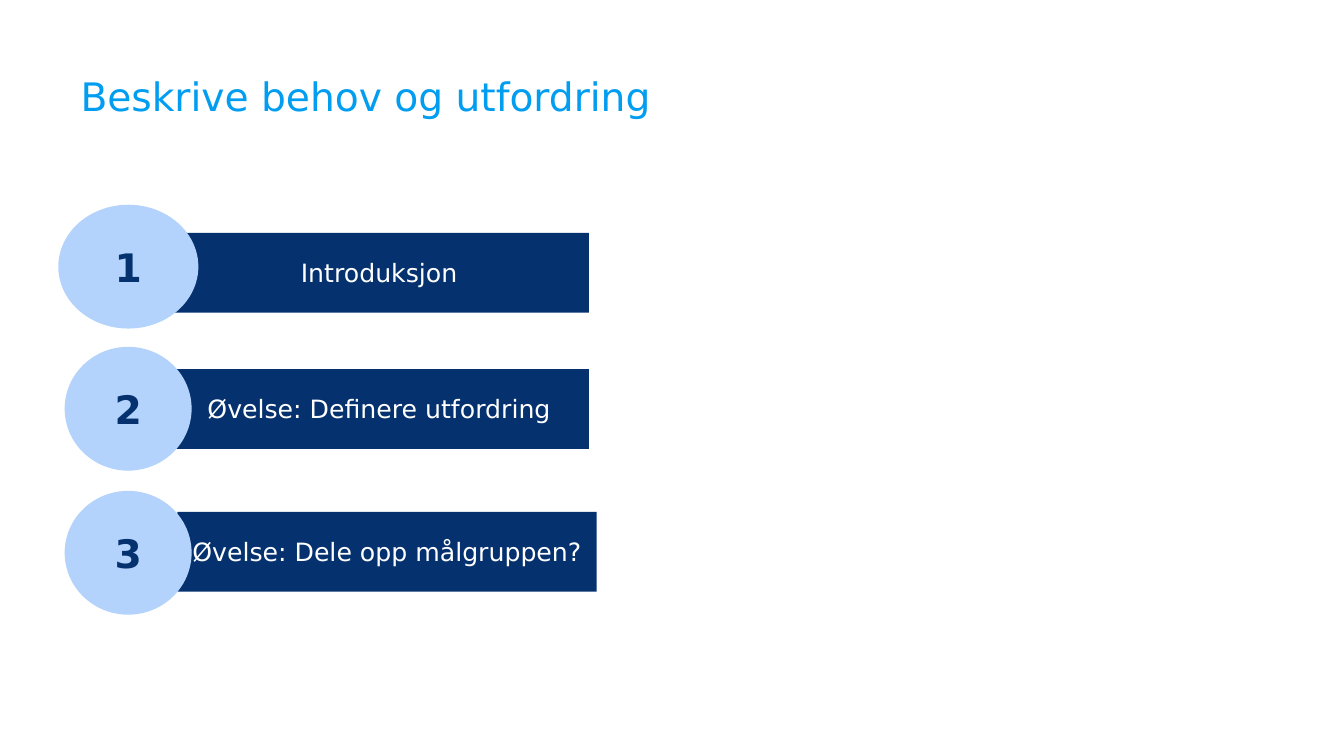
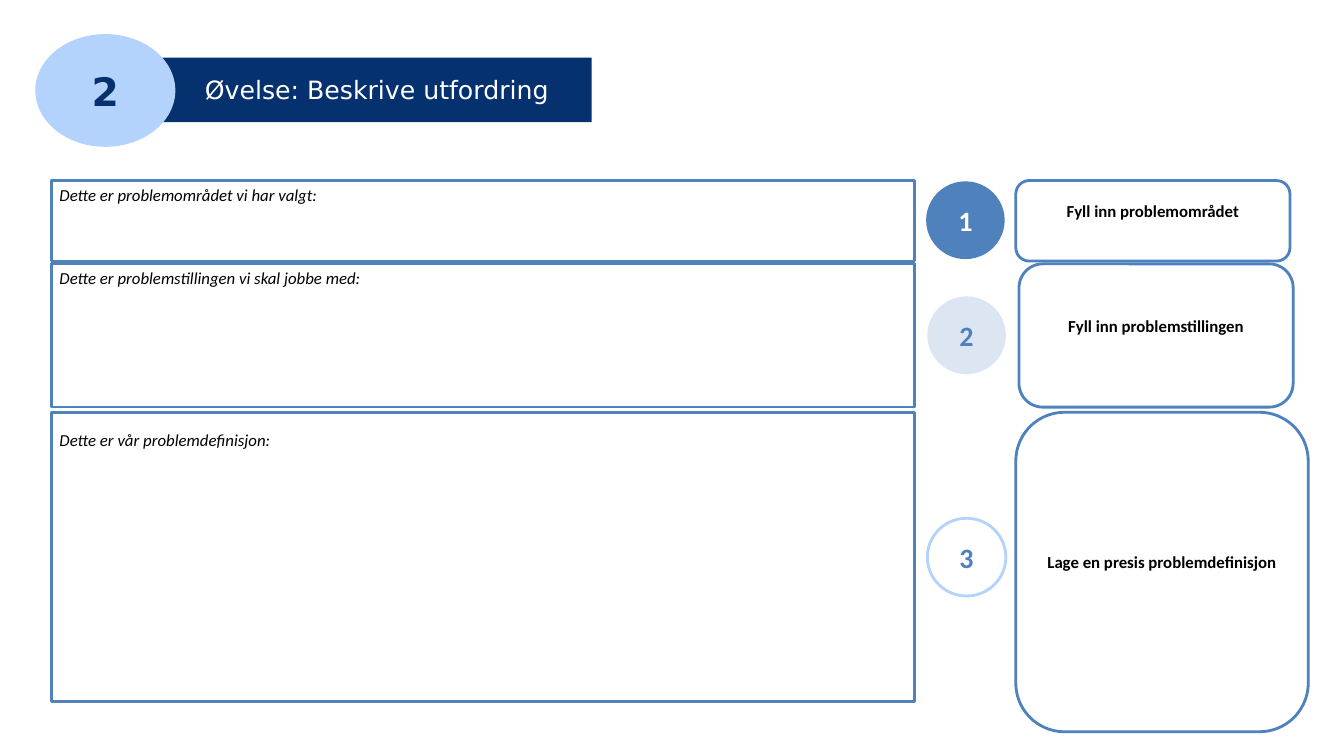
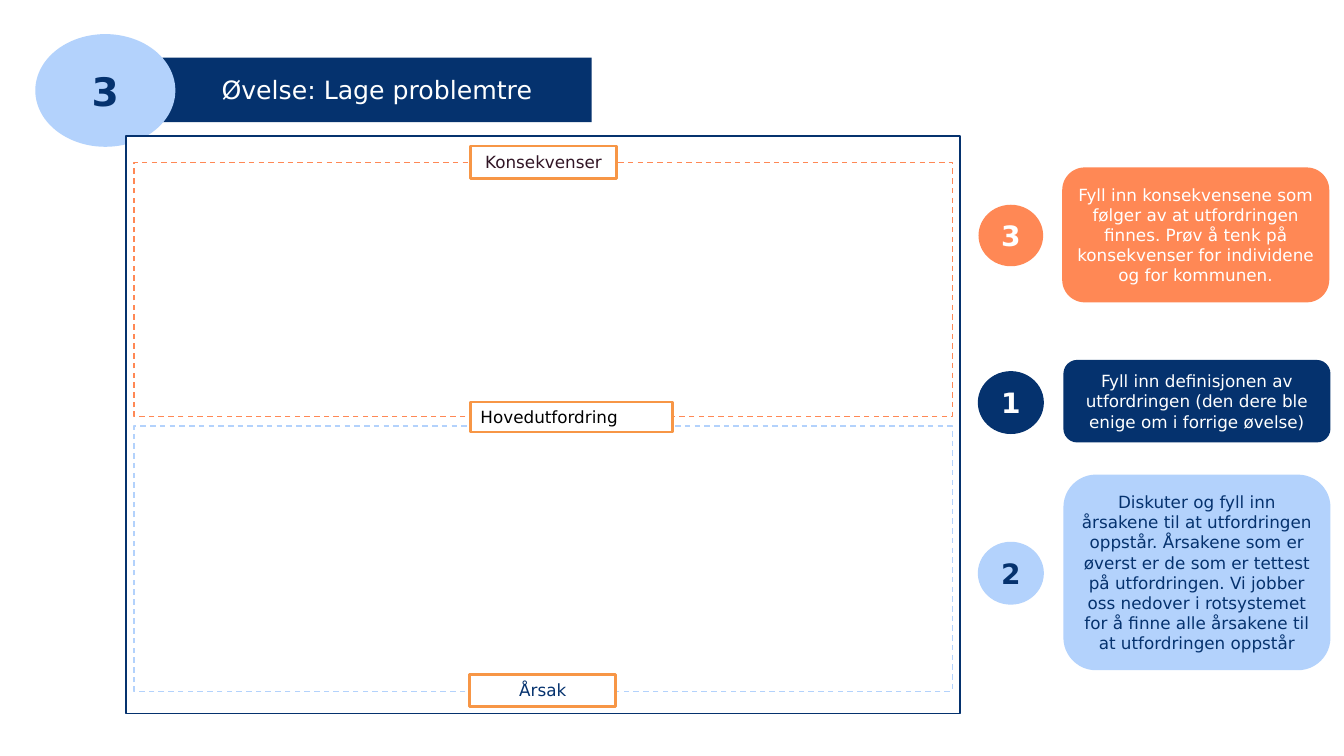
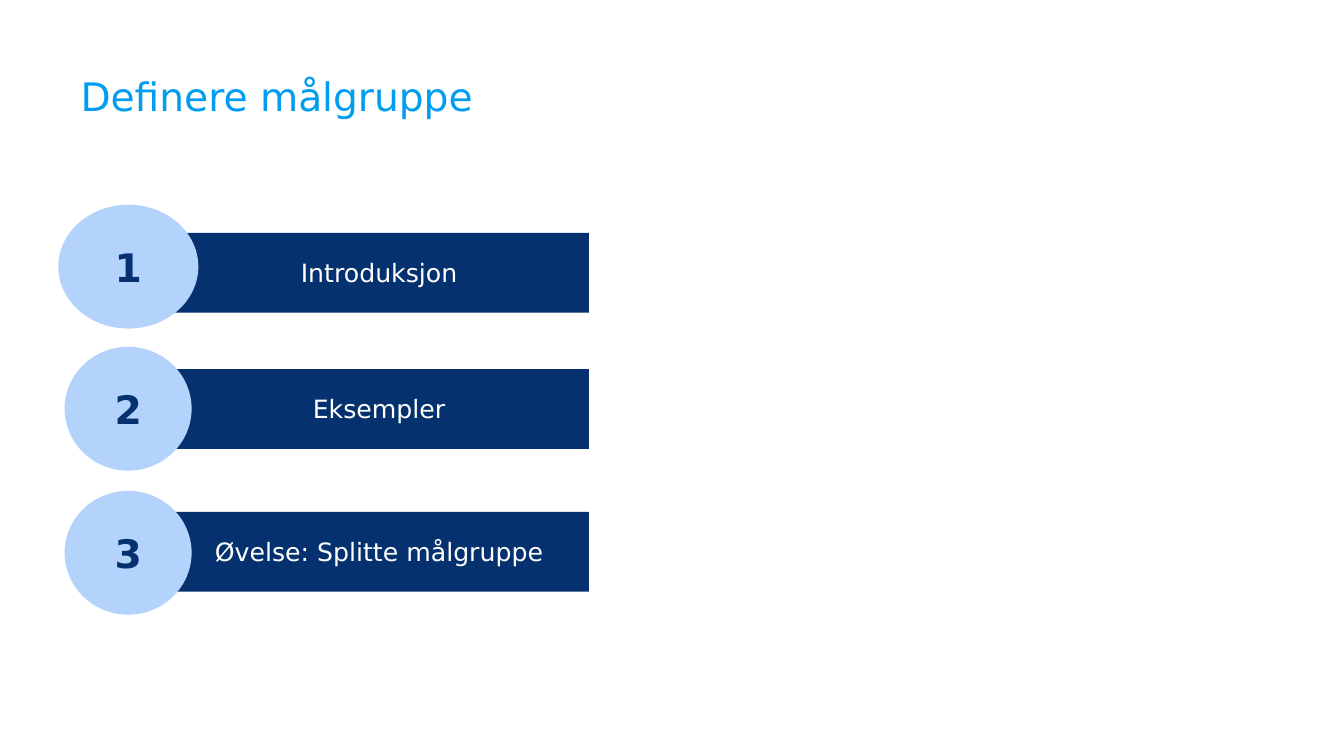
import pptx
import pptx.util
import pptx.dml.color
import pptx.enum.dml
import pptx.enum.shapes
import pptx.enum.text

Cm = pptx.util.Cm
Pt = pptx.util.Pt
RGBColor = pptx.dml.color.RGBColor
SHAPE = pptx.enum.shapes.MSO_SHAPE
ALIGN = pptx.enum.text.PP_ALIGN
ANCHOR = pptx.enum.text.MSO_ANCHOR
DASH = pptx.enum.dml.MSO_LINE.DASH

NAVY = RGBColor(0x05, 0x32, 0x6E)
SKY = RGBColor(0xB3, 0xD2, 0xFC)
TITLE_BLUE = RGBColor(0x00, 0x9D, 0xF0)
STEEL = RGBColor(0x4F, 0x81, 0xBD)
PALE = RGBColor(0xDC, 0xE6, 0xF2)
CORAL = RGBColor(0xFF, 0x88, 0x55)
ORANGE = RGBColor(0xF7, 0x96, 0x46)
PLUM = RGBColor(0x31, 0x15, 0x25)
BLACK = RGBColor(0x00, 0x00, 0x00)
WHITE = RGBColor(0xFF, 0xFF, 0xFF)
SANS = "DejaVu Sans"
CALIBRI = "Calibri"


def write(shape, text, size=12, color=BLACK, font=SANS, bold=False, italic=False,
          align=ALIGN.CENTER, anchor=ANCHOR.MIDDLE, insets=(0.2, 0.1, 0.2, 0.1)):
    frame = shape.text_frame
    frame.word_wrap = True
    frame.vertical_anchor = anchor
    frame.margin_left, frame.margin_top, frame.margin_right, frame.margin_bottom = map(Cm, insets)
    paragraph = frame.paragraphs[0]
    paragraph.alignment = align
    run = paragraph.add_run()
    run.text = text
    run.font.name = font
    run.font.size = Pt(size)
    run.font.bold = bold
    run.font.italic = italic
    run.font.color.rgb = color


def draw(slide, geometry, box, fill=WHITE, line=None, width=2, dash=None):
    shape = slide.shapes.add_shape(geometry, *map(Cm, box))
    shape.shadow.inherit = False
    shape.fill.solid()
    shape.fill.fore_color.rgb = fill
    if line is None:
        shape.line.fill.background()
    else:
        shape.line.color.rgb = line
        shape.line.width = Pt(width)
        if dash is not None:
            shape.line.dash_style = dash
    return shape


deck = pptx.Presentation()
deck.slide_width = Cm(33.87)
deck.slide_height = Cm(19.05)
agenda_1, challenge, tree, agenda_2 = [
    deck.slides.add_slide(deck.slide_layouts[6]) for _ in range(4)]

agendas = [
    (agenda_1, "Beskrive behov og utfordring",
     [("Introduksjon", 4.27), ("Øvelse: Definere utfordring", 4.27),
      ("Øvelse: Dele opp målgruppen?", 4.47)]),
    (agenda_2, "Definere målgruppe",
     [("Introduksjon", 4.27), ("Eksempler", 4.27), ("Øvelse: Splitte målgruppe", 4.27)]),
]
agenda_circles = [(1.47, 5.16, 3.53, 3.12), (1.63, 8.74, 3.2, 3.12), (1.63, 12.37, 3.2, 3.12)]
for slide, heading, topics in agendas:
    title = slide.shapes.add_textbox(Cm(2.03), Cm(1.83), Cm(29.11), Cm(2.59))
    write(title, heading, size=28, color=TITLE_BLUE, align=ALIGN.LEFT,
          anchor=ANCHOR.TOP, insets=(0, 0, 0, 0))
    for (topic, left), top in zip(topics, (5.87, 9.3, 12.9)):
        write(draw(slide, SHAPE.RECTANGLE, (left, top, 10.57, 2.01), NAVY),
              topic, size=18, color=WHITE)
    for number, box in enumerate(agenda_circles, 1):
        write(draw(slide, SHAPE.OVAL, box, SKY), str(number), size=28, color=NAVY, bold=True)

for slide, number, exercise in [(challenge, "2", "Øvelse: Beskrive utfordring"),
                                (tree, "3", "Øvelse: Lage problemtre")]:
    write(draw(slide, SHAPE.RECTANGLE, (4.09, 1.45, 10.82, 1.63), NAVY),
          exercise, size=18, color=WHITE)
    write(draw(slide, SHAPE.OVAL, (0.89, 0.86, 3.53, 2.84), SKY),
          number, size=28, color=NAVY, bold=True)

fields = [
    ("Dette er problemstillingen vi skal jobbe med:", 6.65, 3.61, 0.1),
    ("Dette er problemområdet vi har valgt:", 4.55, 2.03, 0.1),
    ("Dette er vår problemdefinisjon:", 10.39, 7.29, 0.45),
]
for prompt, top, height, inset in fields:
    write(draw(challenge, SHAPE.RECTANGLE, (1.3, top, 21.74, height), line=STEEL),
          prompt, font=CALIBRI, italic=True, align=ALIGN.LEFT,
          anchor=ANCHOR.TOP, insets=(0.2, inset, 0.2, 0.1))

steps = [
    (23.34, 4.57, STEEL, None, WHITE),
    (23.37, 7.47, PALE, None, STEEL),
    (23.37, 13.06, WHITE, SKY, STEEL),
]
for number, (left, top, fill, line, color) in enumerate(steps, 1):
    write(draw(challenge, SHAPE.OVAL, (left, top, 1.98, 1.96), fill, line),
          str(number), size=20, color=color, font=CALIBRI, bold=True)

instructions = [
    ("Fyll inn problemområdet", (25.6, 4.55, 6.91, 2.03)),
    ("Fyll inn problemstillingen", (25.68, 6.65, 6.91, 3.61)),
    ("Lage en presis problemdefinisjon", (25.6, 10.39, 7.37, 8.05)),
]
for instruction, box in instructions:
    write(draw(challenge, SHAPE.ROUNDED_RECTANGLE, box, line=STEEL),
          instruction, font=CALIBRI, bold=True, insets=(0.2, 0.1, 0.2, 0.61))

draw(tree, SHAPE.RECTANGLE, (3.18, 3.43, 21.01, 14.55), line=NAVY, width=1)
for top, height, line in [(4.09, 6.4, CORAL), (10.74, 6.68, SKY)]:
    draw(tree, SHAPE.RECTANGLE, (3.38, top, 20.62, height), line=line, width=1, dash=DASH)

labels = [
    ("Konsekvenser", (11.86, 3.68, 3.68, 0.81), PLUM, ALIGN.CENTER, 0.2),
    ("Hovedutfordring", (11.86, 10.13, 5.08, 0.76), BLACK, ALIGN.LEFT, 0.25),
    ("Årsak", (11.84, 16.99, 3.68, 0.81), NAVY, ALIGN.CENTER, 0.2),
]
for label, box, color, align, inset in labels:
    write(draw(tree, SHAPE.RECTANGLE, box, line=ORANGE),
          label, color=color, align=align, insets=(inset, 0.1, inset, 0.1))

guides = [
    ("3", 5.16, None, (26.77, 4.22, 6.73, 3.4), CORAL, WHITE,
     "Fyll inn konsekvensene som følger av at utfordringen finnes. "
     "Prøv å tenk på konsekvenser for individene og for kommunen."),
    ("1", 9.37, NAVY, (26.8, 9.07, 6.73, 2.08), NAVY, WHITE,
     "Fyll inn definisjonen av utfordringen (den dere ble enige om i forrige øvelse)"),
    ("2", 13.67, SKY, (26.8, 11.96, 6.73, 4.93), SKY, NAVY,
     "Diskuter og fyll inn årsakene til at utfordringen oppstår. "
     "Årsakene som er øverst er de som er tettest på utfordringen. "
     "Vi jobber oss nedover i rotsystemet for å finne alle årsakene til at utfordringen oppstår"),
]
for number, top, line, card, fill, color, guide in guides:
    write(draw(tree, SHAPE.OVAL, (24.66, top, 1.63, 1.55), fill, line, width=1),
          number, size=20, color=color, bold=True)
    write(draw(tree, SHAPE.ROUNDED_RECTANGLE, card, fill), guide, color=color)

deck.save("out.pptx")
